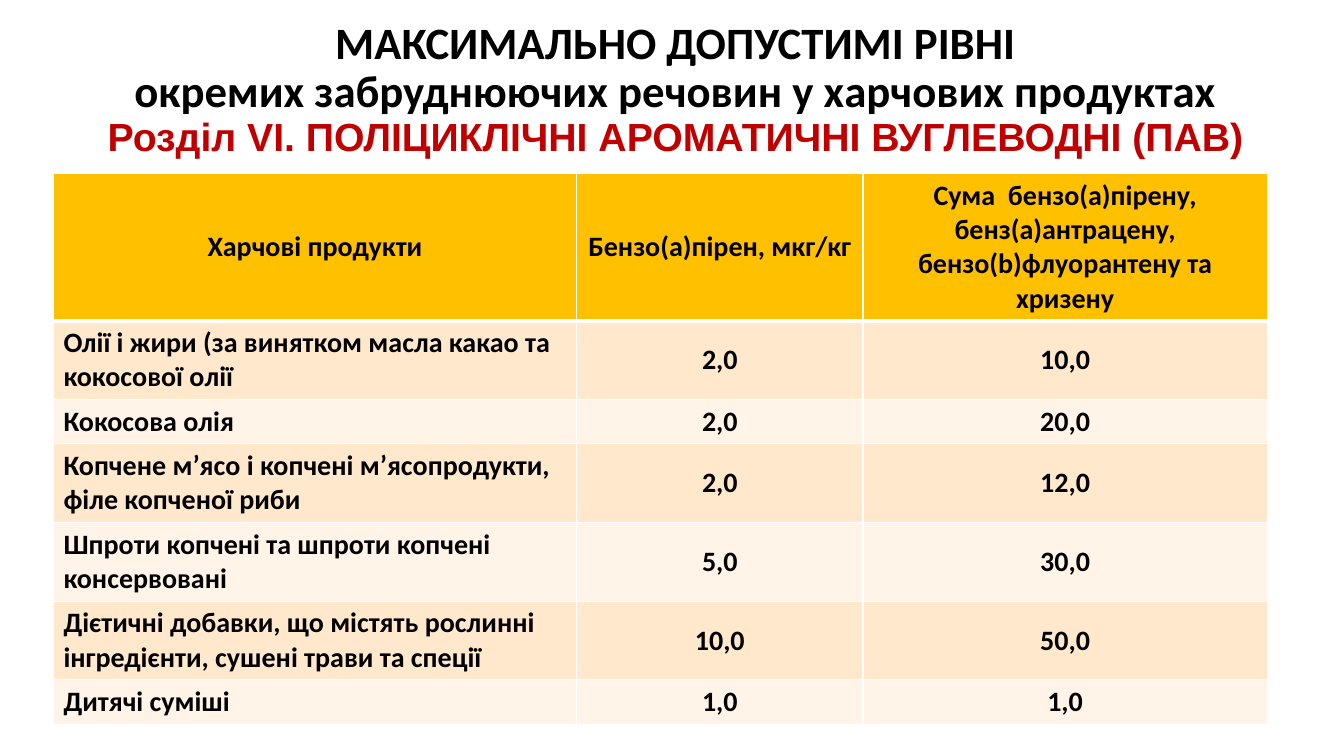
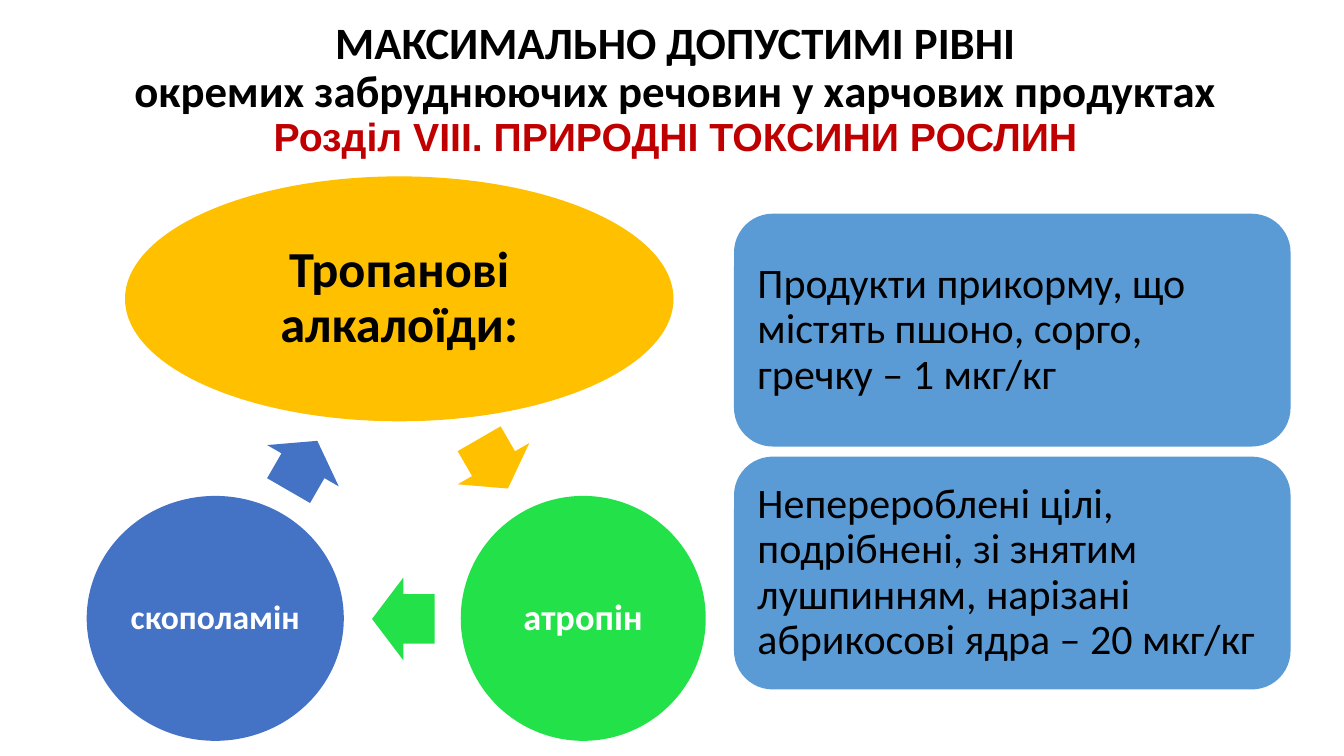
from dataclasses import dataclass

from lxml import etree
from pptx import Presentation
from pptx.dml.color import RGBColor
from pptx.enum.shapes import MSO_SHAPE
from pptx.enum.text import MSO_ANCHOR, PP_ALIGN
from pptx.oxml.ns import qn
from pptx.util import Pt

ELLIPSE = MSO_SHAPE.OVAL
ARROW = MSO_SHAPE.RIGHT_ARROW
CARD = MSO_SHAPE.ROUNDED_RECTANGLE
LEFT, CENTER = PP_ALIGN.LEFT, PP_ALIGN.CENTER
MIDDLE = MSO_ANCHOR.MIDDLE

PX = 9144  # EMU in one px, 100 px to the inch


@dataclass(frozen=True)
class Theme:
    black: str = "000000"
    white: str = "FFFFFF"
    red: str = "C00000"
    amber: str = "FFC000"
    green: str = "23E148"
    blue: str = "4472C4"
    sky: str = "5B9BD5"
    bands: tuple = ("FFE8CC", "FFF4E7")
    body_font: str = "Calibri"
    section_font: str = "Arial"
    title_size: int = 32
    section_size: int = 28
    table_size: int = 20
    card_size: int = 30
    line_spacing: float = 0.9


THEME = Theme()

TITLE_LINES = (
    "МАКСИМАЛЬНО ДОПУСТИМІ РІВНІ",
    "окремих забруднюючих речовин у харчових продуктах",
)

# Each table row: number of text lines in its tallest cell, then the cells
LIMITS = (
    (4, "Харчові продукти", "Бензо(а)пірен, мкг/кг",
     "Сума  бензо(а)пірену, бенз(а)антрацену, бензо(b)флуорантену та хризену"),
    (2, "Олії і жири (за винятком масла какао та кокосової олії", "2,0", "10,0"),
    (1, "Кокосова олія", "2,0", "20,0"),
    (2, "Копчене м’ясо і копчені м’ясопродукти, філе копченої риби", "2,0", "12,0"),
    (2, "Шпроти копчені та шпроти копчені консервовані", "5,0", "30,0"),
    (2, "Дієтичні добавки, що містять рослинні інгредієнти, сушені трави та спеції",
     "10,0", "50,0"),
    (1, "Дитячі суміші", "1,0", "1,0"),
)
COLUMN_WIDTHS = (519, 284, 401)
LINE_HEIGHT, CELL_PADDING = 34, 10

# Cycle step: label, size, text colour, fill, inset, ellipse box, arrow box, arrow angle
ALKALOIDS = (
    ("Тропанові алкалоїди:", 36, THEME.black, THEME.amber, 5,
     (124, 175, 544, 243), (461, 419, 57, 82), 60),
    ("атропін", 26, THEME.white, THEME.green, 4,
     (457, 492, 243, 243), (369, 573, 62, 82), 180),
    ("скополамін", 24, THEME.white, THEME.blue, 3,
     (86, 492, 255, 243), (272, 421, 57, 82), 300),
)

PRODUCT_LIMITS = (
    "Продукти прикорму, що містять пшоно, сорго, гречку – 1 мкг/кг",
    "Неперероблені цілі, подрібнені, зі знятим лушпинням, нарізані "
    "абрикосові ядра – 20 мкг/кг",
)
CARD_BOX, CARD_GAP = (728, 212, 552, 231), 10


# Helpers
def emu(box):
    return [length * PX for length in box]


def rgb(colour):
    return RGBColor.from_string(colour)


def add_run(paragraph, text, size, colour, bold=True, font=THEME.body_font):
    run = paragraph.add_run()
    run.text = text
    run.font.name = font
    run.font.size = Pt(size)
    run.font.bold = bold
    run.font.color.rgb = rgb(colour)


def prepare_frame(frame, align, inset=None):
    """Wrap and centre a text frame vertically; return its first paragraph."""
    frame.word_wrap = True
    frame.vertical_anchor = MIDDLE
    if inset is not None:
        frame.margin_left = frame.margin_right = inset * PX
        frame.margin_top = frame.margin_bottom = inset * PX
    paragraph = frame.paragraphs[0]
    paragraph.alignment = align
    paragraph.line_spacing = THEME.line_spacing
    return paragraph


def add_filled(slide, preset, box, fill):
    shape = slide.shapes.add_shape(preset, *emu(box))
    shape.shadow.inherit = False
    shape.fill.solid()
    shape.fill.fore_color.rgb = rgb(fill)
    shape.line.fill.background()
    return shape


def add_title(slide, section):
    title = slide.shapes.add_textbox(*emu((23, 17, 1294, 145)))
    paragraph = prepare_frame(title.text_frame, CENTER)
    for line in TITLE_LINES:
        add_run(paragraph, line, THEME.title_size, THEME.black)
        paragraph.add_line_break()
    add_run(paragraph, section, THEME.section_size, THEME.red,
            font=THEME.section_font)


def set_borders(cell, bottom_width):
    properties = cell._tc.get_or_add_tcPr()
    for side, width in (("L", 1), ("R", 1), ("T", 1), ("B", bottom_width)):
        border = etree.SubElement(properties, qn(f"a:ln{side}"), w=str(Pt(width)))
        fill = etree.SubElement(border, qn("a:solidFill"))
        etree.SubElement(fill, qn("a:srgbClr"), val=THEME.white)


def fill_cell(cell, text, fill, align, bottom_width):
    set_borders(cell, bottom_width)
    cell.fill.solid()
    cell.fill.fore_color.rgb = rgb(fill)
    cell.vertical_anchor = MIDDLE
    paragraph = cell.text_frame.paragraphs[0]
    paragraph.alignment = align
    add_run(paragraph, text, THEME.table_size, THEME.black)


def add_limits_table(slide):
    heights = [LINE_HEIGHT * row[0] + CELL_PADDING for row in LIMITS]
    box = (53, 172, sum(COLUMN_WIDTHS), sum(heights))
    table = slide.shapes.add_table(
        len(LIMITS), len(COLUMN_WIDTHS), *emu(box)).table
    for column, width in zip(table.columns, COLUMN_WIDTHS):
        column.width = width * PX
    for r, (_, *texts) in enumerate(LIMITS):
        table.rows[r].height = heights[r] * PX
        header = r == 0
        fill = THEME.amber if header else THEME.bands[(r - 1) % 2]
        for c, text in enumerate(texts):
            align = CENTER if header or c else LEFT
            fill_cell(table.cell(r, c), text, fill, align, 3 if header else 1)


def add_cycle(slide):
    for label, size, colour, fill, inset, box, arrow_box, angle in ALKALOIDS:
        alkaloid = add_filled(slide, ELLIPSE, box, fill)
        paragraph = prepare_frame(alkaloid.text_frame, CENTER, inset)
        add_run(paragraph, label, size, colour)
        arrow = add_filled(slide, ARROW, arrow_box, fill)
        arrow.adjustments[0] = 0.6
        arrow.adjustments[1] = 0.5
        arrow.rotation = angle


def add_cards(slide):
    left, top, width, height = CARD_BOX
    for i, text in enumerate(PRODUCT_LIMITS):
        box = (left, top + i * (height + CARD_GAP), width, height)
        card = add_filled(slide, CARD, box, THEME.sky)
        paragraph = prepare_frame(card.text_frame, LEFT, 12)
        add_run(paragraph, text, THEME.card_size, THEME.black, bold=False)


def main():
    deck = Presentation()
    deck.slide_width, deck.slide_height = emu((1333, 750))
    blank = deck.slide_layouts[6]

    # Polycyclic aromatic hydrocarbons
    hydrocarbons = deck.slides.add_slide(blank)
    add_limits_table(hydrocarbons)
    add_title(hydrocarbons, "Розділ VI. ПОЛІЦИКЛІЧНІ АРОМАТИЧНІ ВУГЛЕВОДНІ (ПАВ)")

    # Natural plant toxins
    toxins = deck.slides.add_slide(blank)
    add_cycle(toxins)
    add_title(toxins, "Розділ VIII. ПРИРОДНІ ТОКСИНИ РОСЛИН")
    add_cards(toxins)

    deck.save("out.pptx")


if __name__ == "__main__":
    main()
